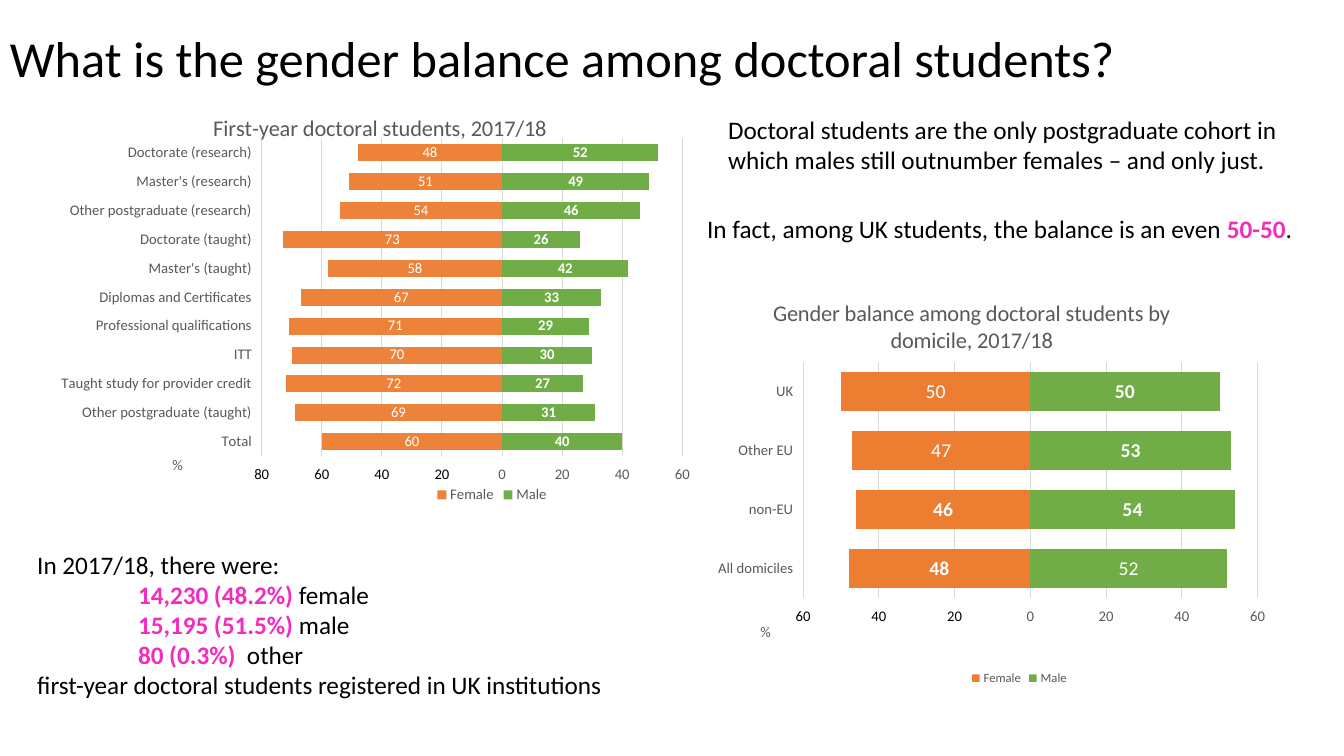
from lxml.etree import SubElement
from pptx import Presentation
from pptx.chart.data import CategoryChartData as ChartData
from pptx.dml.color import RGBColor
from pptx.enum.chart import XL_CHART_TYPE as Kind
from pptx.enum.chart import XL_LABEL_POSITION as Place
from pptx.enum.chart import XL_LEGEND_POSITION as Side
from pptx.enum.chart import XL_TICK_LABEL_POSITION as Label
from pptx.enum.chart import XL_TICK_MARK as Tick
from pptx.enum.text import MSO_ANCHOR as Anchor
from pptx.oxml.ns import qn
from pptx.util import Pt

PX = 9525
FONT = "Calibri"
BLACK = RGBColor(0x00, 0x00, 0x00)
WHITE = RGBColor(0xFF, 0xFF, 0xFF)
GREY = RGBColor(0x59, 0x59, 0x59)
RULE = RGBColor(0xD9, 0xD9, 0xD9)
PINK = RGBColor(0xF2, 0x2C, 0xBE)
ORANGE = RGBColor(0xED, 0x7D, 0x31)
CORAL = RGBColor(0xED, 0x83, 0x3B)
GREEN = RGBColor(0x70, 0xAD, 0x47)


def style(font, size, color, bold=False):
    font.name, font.size, font.bold = FONT, Pt(size), bold
    font.color.rgb = color


def add_text(slide, box, lines, size=18, anchor=Anchor.TOP, spacing=1.0, indents=()):
    """Words between asterisks are pink and bold; indents maps a line to px."""
    frame = slide.shapes.add_textbox(*(n * PX for n in box)).text_frame
    frame.word_wrap = True
    frame.vertical_anchor = anchor
    for i, line in enumerate(lines):
        para = frame.paragraphs[0] if i == 0 else frame.add_paragraph()
        para.line_spacing = spacing
        if i in indents:
            para._p.get_or_add_pPr().set("marL", str(indents[i] * PX))
        for j, part in enumerate(line.split("*")):
            if part:
                run = para.add_run()
                run.text = part
                style(run.font, size, PINK if j % 2 else BLACK, bool(j % 2))


def put(node, inner=False, **spots):
    """Give a chart part a manual layout in fractions of the chart."""
    for old in node.findall(qn("c:layout")):
        node.remove(old)
    layout = SubElement(node, qn("c:layout"))
    over = node.find(qn("c:overlay"))
    if over is None:
        node.insert(0, layout)
    else:
        over.addprevious(layout)
    manual = SubElement(layout, qn("c:manualLayout"))
    if inner:
        SubElement(manual, qn("c:layoutTarget")).set("val", "inner")
    for side in "xy":
        SubElement(manual, qn(f"c:{side}Mode")).set("val", "edge")
    for side, value in spots.items():
        SubElement(manual, qn(f"c:{side}")).set("val", str(value))


def add_title(owner, text, size, x, y):
    owner.has_title = True
    title = owner.axis_title if hasattr(owner, "axis_title") else owner.chart_title
    para = title.text_frame.paragraphs[0]
    run = para.add_run()
    run.text = text
    style(para.font, size, GREY)
    style(run.font, size, GREY)
    put(title._element, x=x, y=y)


def add_bars(slide, box, title, rows, colors, low, gap, size, small, plain, spots):
    """Draw females to the left of zero and males to the right."""
    data = ChartData(number_format="0;0")
    data.categories = [row[0] for row in rows]
    data.add_series("Female", [-row[1] for row in rows])
    data.add_series("Male", [row[2] for row in rows])
    chart = slide.shapes.add_chart(
        Kind.BAR_STACKED, *(n * PX for n in box), data).chart
    style(chart.font, 10, BLACK)
    add_title(chart, title, 16, *spots["title"])

    # Axes: the reversed categories put the high side at the bottom
    cats, vals = chart.category_axis, chart.value_axis
    for axis in (cats, vals):
        axis.major_tick_mark = axis.minor_tick_mark = Tick.NONE
        style(axis.tick_labels.font, 10.5, GREY)
    cats.reverse_order = True
    cats.tick_label_position = Label.LOW
    vals.tick_label_position = Label.HIGH
    vals.minimum_scale, vals.maximum_scale, vals.major_unit = low, 60, 20
    vals.tick_labels.number_format = "0;[Black]0"
    vals.tick_labels.number_format_is_linked = False
    vals.format.line.fill.background()
    vals.has_major_gridlines = True
    for line in (cats.format.line, vals.major_gridlines.format.line):
        line.color.rgb, line.width = RULE, Pt(0.75)
    add_title(vals, "%", 10.5, *spots["unit"])

    # Bars and their labels
    plot = chart.plots[0]
    plot.gap_width, plot.overlap = gap, 100
    plot.vary_by_categories = False
    for k, series in enumerate(plot.series):
        series.invert_if_negative = False
        series.format.fill.solid()
        series.format.fill.fore_color.rgb = colors[k]
        labels = series.data_labels
        labels.show_value = True
        labels.position = Place.CENTER
        labels.number_format, labels.number_format_is_linked = "0;0", False
        style(labels.font, size, WHITE, True)
        for i in plain[k]:
            label = series.points[i].data_label
            run = label.text_frame.paragraphs[0].add_run()
            run.text = str(rows[i][k + 1])
            style(run.font, size, WHITE)
            label.position = Place.CENTER

    # Legend and plot area
    chart.has_legend = True
    legend = chart.legend
    legend.position = Side.BOTTOM
    legend.include_in_layout = False
    style(legend.font, small, GREY)
    x, y = spots["legend"]
    put(legend._element, x=x, y=y)
    x, y, w, h = spots["plot"]
    put(chart._chartSpace.chart.plotArea, inner=True, x=x, y=y, w=w, h=h)


def add_notes(slide):
    add_text(slide, (0, -11, 1104, 139),
             ["What is the gender balance among doctoral students?"],
             size=36, anchor=Anchor.MIDDLE, spacing=0.9)
    add_text(slide, (684, 104, 586, 62),
             ["Doctoral students are the only postgraduate cohort in which males "
              "still outnumber females – and only just."])
    add_text(slide, (664, 198, 586, 38),
             ["In fact, among UK students, the balance is an even *50-50*."])
    add_text(slide, (26, 518, 647, 156),
             ["In 2017/18, there were:", "*14,230 (48.2%) *female",
              "*15,195 (51.5%) *male", "*80 (0.3%) * other",
              "first-year doctoral students registered in UK institutions"],
             indents={1: 96, 2: 96, 3: 96})


def add_charts(slide):
    courses = [
        ("Doctorate (research)", 48, 52), ("Master's (research)", 51, 49),
        ("Other postgraduate (research)", 54, 46), ("Doctorate (taught)", 73, 26),
        ("Master's (taught)", 58, 42), ("Diplomas and Certificates", 67, 33),
        ("Professional qualifications", 71, 29), ("ITT", 70, 30),
        ("Taught study for provider credit", 72, 27),
        ("Other postgraduate (taught)", 69, 31), ("Total", 60, 40)]
    homes = [("UK", 50, 50), ("Other EU", 47, 53), ("non-EU", 46, 54),
             ("All domiciles", 48, 52)]
    add_bars(slide, (673, 263, 541, 409),
             "Gender balance among doctoral students by domicile, 2017/18",
             homes, (ORANGE, GREEN), low=-60, gap=51, size=14, small=9,
             plain=((0, 1), (3,)),
             spots={"title": (0.11, 0.04), "unit": (0.09, 0.8),
                    "legend": (0.46, 0.91), "plot": (0.17, 0.2, 0.8, 0.55)})
    add_bars(slide, (49, 91, 626, 409), "First-year doctoral students, 2017/18",
             courses, (CORAL, GREEN), low=-80, gap=70, size=10.5, small=10.5,
             plain=(range(len(courses)), ()),
             spots={"title": (0.24, 0.03), "unit": (0.18, 0.83),
                    "legend": (0.58, 0.9), "plot": (0.32, 0.1, 0.64, 0.74)})


def main():
    deck = Presentation()
    deck.slide_width, deck.slide_height = 1280 * PX, 720 * PX
    slide = deck.slides.add_slide(deck.slide_layouts[6])
    add_notes(slide)
    add_charts(slide)
    deck.save("out.pptx")


if __name__ == "__main__":
    main()
